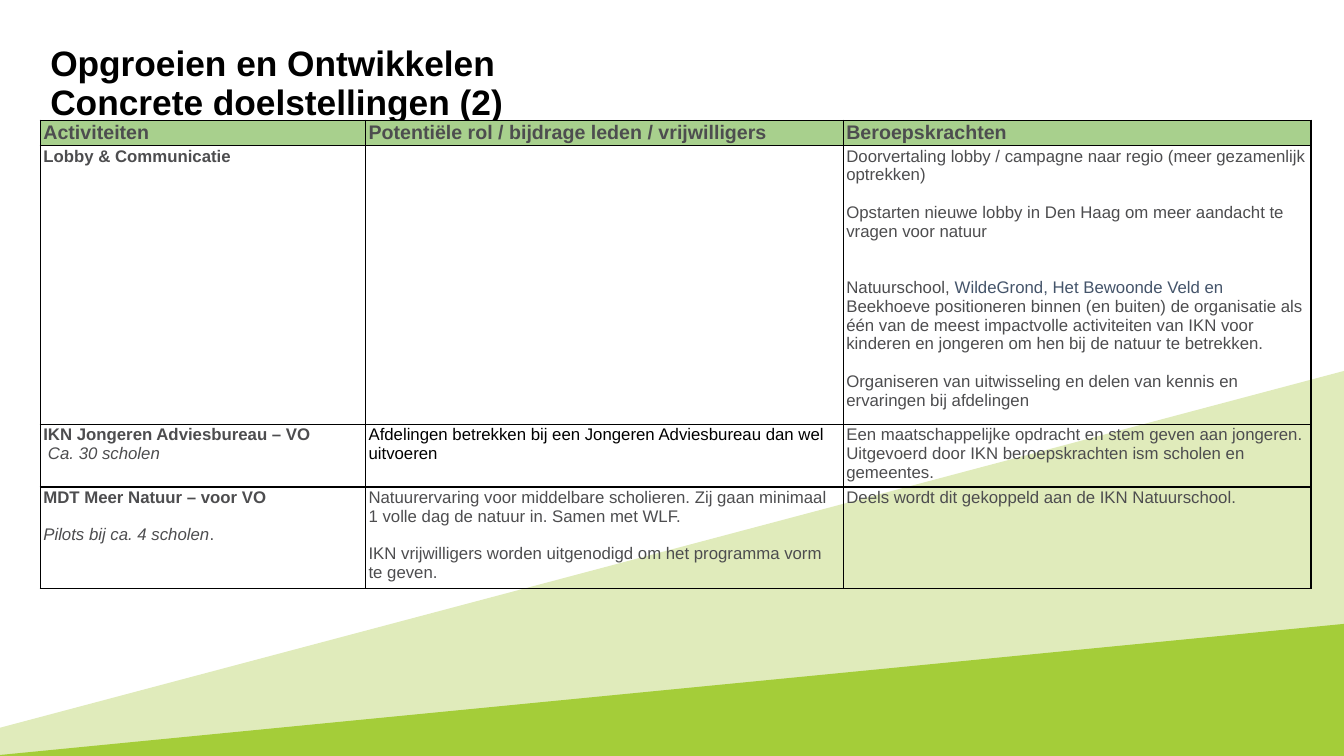
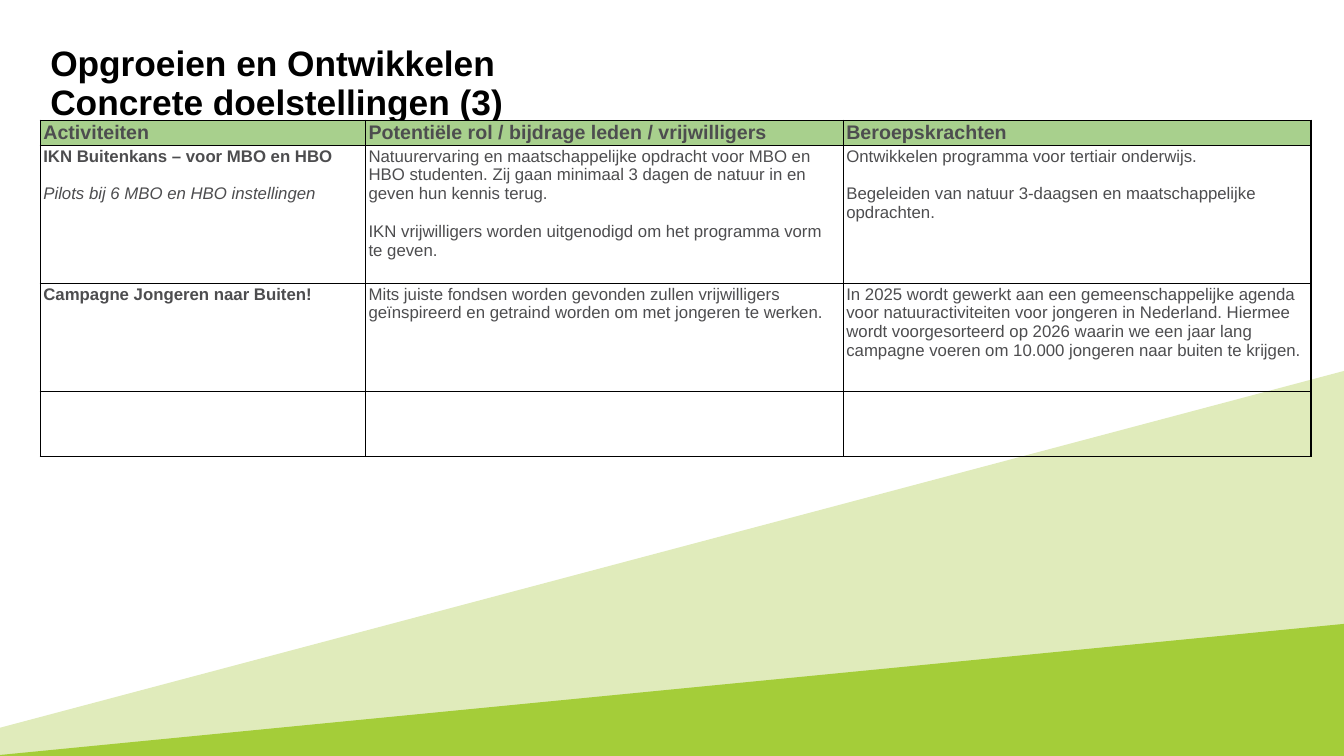
from lxml import etree
from pptx import Presentation
from pptx.dml.color import RGBColor
from pptx.enum.text import MSO_ANCHOR
from pptx.oxml.ns import qn
from pptx.util import Inches, Pt

TOP = MSO_ANCHOR.TOP

BLACK = RGBColor(0x00, 0x00, 0x00)
GREY = RGBColor(0x4D, 0x4D, 0x4F)
BLUE = RGBColor(0x44, 0x54, 0x6A)
LIGHT_GREEN = RGBColor(0xE0, 0xEB, 0xBB)
GREEN = RGBColor(0xA4, 0xCD, 0x39)
HEADER_GREEN = RGBColor(0xA8, 0xD0, 0x8D)

# Lengths are percentages of the slide's width or height.
LEFT = 3
TABLE_TOP = 15.9
COLUMNS = (24.2, 35.55, 34.8)
HEADER_ROW = 3.2
BANDS = ((LIGHT_GREEN, 96.27, 49.07), (GREEN, 99.87, 82.53))

FONT = "Arial"
BODY_SIZE = 12
HEADER_SIZE = 14
BLANK_LINE = Pt(13.4)

# Span styles: colour, bold, italic
PLAIN = (GREY, False, False)
BOLD = (GREY, True, False)
ITALIC = (GREY, False, True)
DARK = (BLACK, False, False)
ACCENT = (BLUE, False, False)

HEADERS = ("Activiteiten", "Potentiële rol / bijdrage leden / vrijwilligers", "Beroepskrachten")


def para(text, style=PLAIN, gap=0):
    """A paragraph of one span, with gap blank lines above it."""
    return gap, [(text, style)]


VOLUNTEERS = para("IKN vrijwilligers worden uitgenodigd om het programma vorm te geven.", gap=1)

SLIDES = (
    ("Opgroeien en Ontwikkelen\vConcrete doelstellingen (2)", (
        (35.2, (
            [para("Lobby & Communicatie", BOLD)],
            [],
            [para("Doorvertaling lobby / campagne naar regio (meer gezamenlijk optrekken)"),
             para("Opstarten nieuwe lobby in Den Haag om meer aandacht te vragen voor natuur",
                  gap=1),
             (2, [("Natuurschool, ", PLAIN),
                  ("WildeGrond, Het Bewoonde Veld en ", ACCENT),
                  ("Beekhoeve positioneren binnen (en buiten) de organisatie als één van de "
                   "meest impactvolle activiteiten van IKN voor kinderen en jongeren om hen "
                   "bij de natuur te betrekken.", PLAIN)]),
             para("Organiseren van uitwisseling en delen van kennis en ervaringen bij "
                  "afdelingen", gap=1)],
        )),
        (7.8, (
            [para("IKN Jongeren Adviesbureau – VO", BOLD), para(" Ca. 30 scholen", ITALIC)],
            [para("Afdelingen betrekken bij een Jongeren Adviesbureau dan wel uitvoeren", DARK)],
            [para("Een maatschappelijke opdracht en stem geven aan jongeren. Uitgevoerd door "
                  "IKN beroepskrachten ism scholen en gemeentes.")],
        )),
        (12.85, (
            [para("MDT Meer Natuur – voor VO", BOLD),
             (1, [("Pilots bij ca. 4 scholen", ITALIC), (".", PLAIN)])],
            [para("Natuurervaring voor middelbare scholieren. Zij gaan minimaal 1 volle dag de "
                  "natuur in. Samen met WLF."), VOLUNTEERS],
            [para("Deels wordt dit gekoppeld aan de IKN Natuurschool.")],
        )),
    )),
    ("Opgroeien en Ontwikkelen\vConcrete doelstellingen (3)", (
        (18.27, (
            [para("IKN Buitenkans – voor MBO en HBO", BOLD),
             para("Pilots bij 6 MBO en HBO instellingen", ITALIC, gap=1)],
            [para("Natuurervaring en maatschappelijke opdracht voor MBO en HBO studenten. Zij "
                  "gaan minimaal 3 dagen de natuur in en geven hun kennis terug."), VOLUNTEERS],
            [para("Ontwikkelen programma voor tertiair onderwijs."),
             para("Begeleiden van natuur 3-daagsen en maatschappelijke opdrachten.", gap=1)],
        )),
        (14.27, (
            [para("Campagne Jongeren naar Buiten!", BOLD)],
            [para("Mits juiste fondsen worden gevonden zullen vrijwilligers geïnspireerd en "
                  "getraind worden om met jongeren te werken.")],
            [para("In 2025 wordt gewerkt aan een gemeenschappelijke agenda voor "
                  "natuuractiviteiten voor jongeren in Nederland. Hiermee wordt voorgesorteerd "
                  "op 2026 waarin we een jaar lang campagne voeren om 10.000 jongeren naar "
                  "buiten te krijgen.")],
        )),
        (8.53, ([], [], [])),
    )),
)


class Deck:
    """Holds the presentation, its style and the current page."""

    def __init__(self):
        self.presentation = Presentation()
        self.presentation.slide_width = Inches(13.33)
        self.presentation.slide_height = Inches(7.5)
        self.page = None

    def across(self, share):
        return round(self.presentation.slide_width * share / 100)

    def down(self, share):
        return round(self.presentation.slide_height * share / 100)

    def new_page(self, title):
        self.page = self.presentation.slides.add_slide(self.presentation.slide_layouts[6])
        for color, left_edge, right_edge in BANDS:
            self.band(color, left_edge, right_edge)
        self.title(title)

    def band(self, color, left_edge, right_edge):
        """A slanted band that fills the slide down to its bottom."""
        builder = self.page.shapes.build_freeform(0, self.down(left_edge))
        builder.add_line_segments([(self.across(100), self.down(right_edge)),
                                   (self.across(100), self.down(100)),
                                   (0, self.down(100))])
        shape = builder.convert_to_shape()
        shape.shadow.inherit = False
        shape.fill.solid()
        shape.fill.fore_color.rgb = color
        shape.line.fill.background()

    def title(self, text):
        box = self.page.shapes.add_textbox(self.across(LEFT), self.down(5.2),
                                           self.across(86.27), self.down(9.2))
        frame = box.text_frame
        frame.word_wrap = True
        frame.vertical_anchor = TOP
        frame.text = text
        paragraph = frame.paragraphs[0]
        paragraph.line_spacing = 0.94
        for run in paragraph.runs:
            self.font(run.font, 25.2, (BLACK, True, False))

    def font(self, font, size, style):
        font.name = FONT
        font.size = Pt(size)
        font.color.rgb, font.bold, font.italic = style

    def table(self, rows):
        heights = [HEADER_ROW] + [height for height, _ in rows]
        frame = self.page.shapes.add_table(
            len(heights), len(COLUMNS), self.across(LEFT), self.down(TABLE_TOP),
            self.across(sum(COLUMNS)), self.down(sum(heights)))
        table = frame.table
        table.first_row = table.horz_banding = False
        for column, width in zip(table.columns, COLUMNS):
            column.width = self.across(width)
        for row, height in zip(table.rows, heights):
            row.height = self.down(height)
        for cell, header in zip(table.rows[0].cells, HEADERS):
            self.cell(cell, [para(header, BOLD)], HEADER_SIZE, HEADER_GREEN)
        for index, (_, contents) in enumerate(rows, 1):
            for cell, paragraphs in zip(table.rows[index].cells, contents):
                self.cell(cell, paragraphs)

    def cell(self, cell, paragraphs, size=BODY_SIZE, fill=None):
        cell.margin_left = cell.margin_right = Inches(0.03)
        cell.margin_top = cell.margin_bottom = Inches(0.01)
        self.borders(cell)
        if fill is None:
            cell.fill.background()
        else:
            cell.fill.solid()
            cell.fill.fore_color.rgb = fill
        frame = cell.text_frame
        frame.text = "\n".join("" for _ in paragraphs)
        for paragraph, (gap, spans) in zip(frame.paragraphs, paragraphs):
            if gap:
                paragraph.space_before = gap * BLANK_LINE
            for text, style in spans:
                span = paragraph.add_run()
                span.text = text
                self.font(span.font, size, style)
        if not paragraphs:
            frame.paragraphs[0].font.size = Pt(size)

    def borders(self, cell):
        properties = cell._tc.get_or_add_tcPr()
        for side in ("a:lnL", "a:lnR", "a:lnT", "a:lnB"):
            line = etree.SubElement(properties, qn(side), w=str(Pt(1)))
            solid = etree.SubElement(line, qn("a:solidFill"))
            etree.SubElement(solid, qn("a:srgbClr"), val=str(BLACK))


def main():
    deck = Deck()
    for title, rows in SLIDES:
        deck.new_page(title)
        deck.table(rows)
    deck.presentation.save("out.pptx")


if __name__ == "__main__":
    main()
